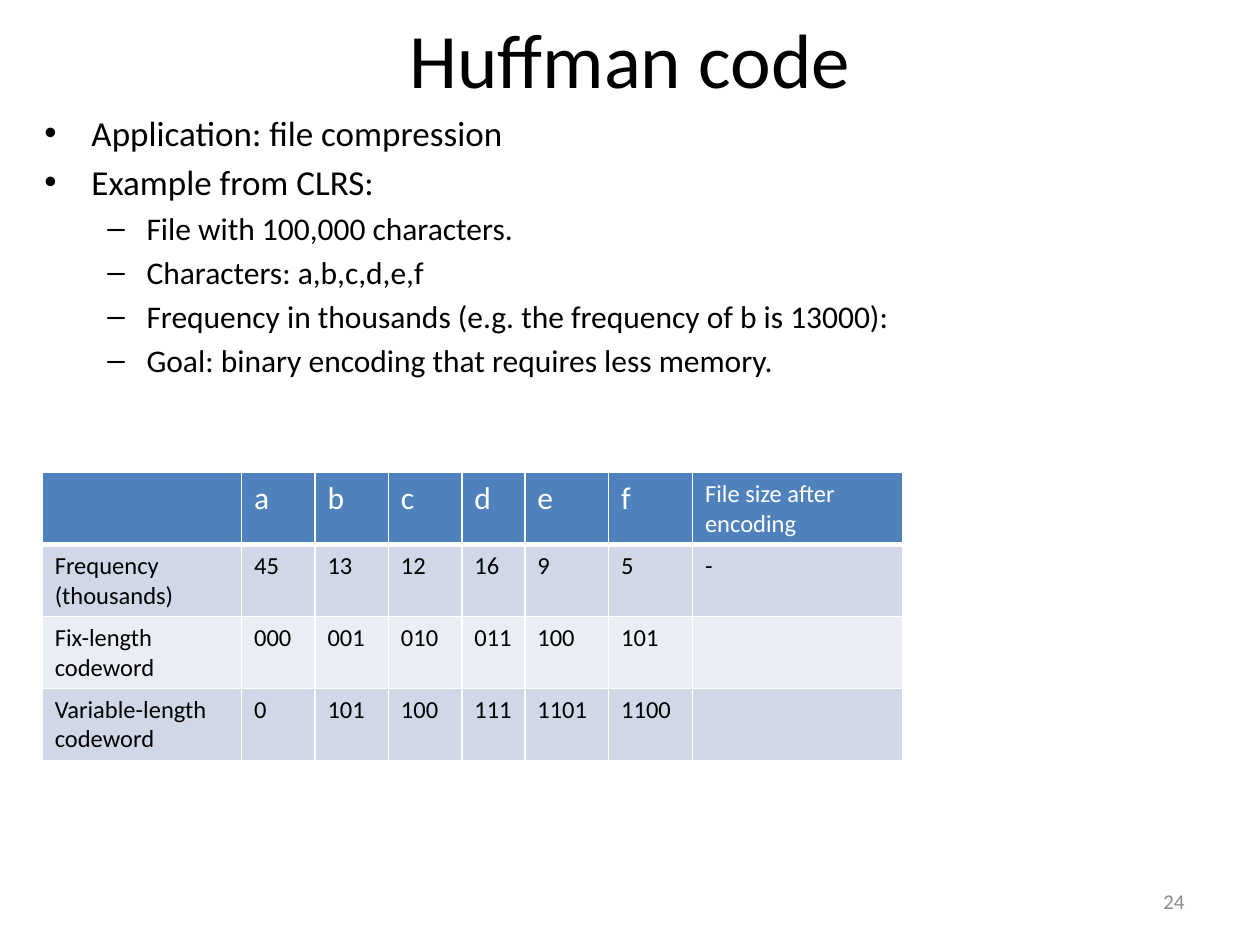
"""Build the Huffman code slide with its bullet list and codeword table."""
from lxml.etree import SubElement
from pptx import Presentation
from pptx.dml.color import RGBColor
from pptx.enum.text import MSO_ANCHOR, MSO_AUTO_SIZE, PP_ALIGN
from pptx.oxml.ns import qn
from pptx.util import Cm, Pt

COLORS = {
    "text": "000000",
    "header": "4F81BD",
    "dark_band": "D0D8E8",
    "light_band": "E9EDF4",
    "white": "FFFFFF",
    "number": "8C8C8C",
}


def format_font(font, size, color):
    for attribute, value in {"name": "Calibri", "size": Pt(size), "bold": False}.items():
        setattr(font, attribute, value)
    font.color.rgb = RGBColor.from_string(COLORS[color])


def add_border(cell, side, width):
    line = SubElement(cell._tc.get_or_add_tcPr(), qn(f"a:ln{side}"), w=str(Pt(width)))
    SubElement(SubElement(line, qn("a:solidFill")), qn("a:srgbClr"), val=COLORS["white"])


presentation = Presentation()
presentation.slide_width, presentation.slide_height = Cm(25.4), Cm(19.05)
slide = presentation.slides.add_slide(presentation.slide_layouts[1])

title, outline = slide.placeholders
number = slide.shapes.add_textbox(0, 0, 0, 0)
positions = [
    (title, (1.27, 0, 22.86, 2.33)),
    (outline, (0.64, 2.12, 22.86, 6.35)),
    (number, (18.2, 17.66, 5.93, 1.01)),
]
for part, lengths in positions:
    for attribute, length in zip(("left", "top", "width", "height"), lengths):
        setattr(part, attribute, Cm(length))

title.text_frame.text = "Huffman code"
format_font(title.text_frame.paragraphs[0].runs[0].font, 44, "text")

points = [
    (0, "Application: file compression"),
    (0, "Example from CLRS:"),
    (1, "File with 100,000 characters."),
    (1, "Characters: a,b,c,d,e,f"),
    (1, "Frequency in thousands (e.g. the frequency of b is 13000):"),
    (1, "Goal: binary encoding that requires less memory."),
]
level_formats = [
    {"size": 20, "margin": 0.95, "indent": -0.95},
    {"size": 18, "margin": 2.06, "indent": -0.79},
]
outline.text_frame.text = "\n".join(wording for level, wording in points)
outline.text_frame.auto_size = MSO_AUTO_SIZE.NONE
for paragraph, (level, wording) in zip(outline.text_frame.paragraphs, points):
    layout = level_formats[level]
    paragraph.level = level
    properties = paragraph._p.get_or_add_pPr()
    properties.set("marL", str(Cm(layout["margin"])))
    properties.set("indent", str(Cm(layout["indent"])))
    format_font(paragraph.runs[0].font, layout["size"], "text")

code_rows = [
    ["", "a", "b", "c", "d", "e", "f", "File size after encoding"],
    ["Frequency\n(thousands)", "45", "13", "12", "16", "9", "5", "-"],
    ["Fix-length codeword", "000", "001", "010", "011", "100", "101", ""],
    ["Variable-length codeword", "0", "101", "100", "111", "1101", "1100", ""],
]
column_widths = [4.02, 1.48, 1.48, 1.48, 1.27, 1.69, 1.69, 4.24]
row_fills = ["header", "dark_band", "light_band", "dark_band"]
row_height = 1.45
codes = slide.shapes.add_table(
    len(code_rows), len(column_widths), Cm(0.85), Cm(9.53),
    Cm(sum(column_widths)), Cm(row_height * len(code_rows)),
).table
for column, width in zip(codes.columns, column_widths):
    column.width = Cm(width)
for row_index, (row, wordings) in enumerate(zip(codes.rows, code_rows)):
    row.height = Cm(row_height)
    is_header = row_index == 0
    border_widths = {"L": 1, "R": 1, "T": 3 if row_index == 1 else 1, "B": 3 if is_header else 1}
    for cell, wording in zip(row.cells, wordings):
        cell.text = wording
        for side, width in border_widths.items():
            add_border(cell, side, width)
        cell.fill.solid()
        cell.fill.fore_color.rgb = RGBColor.from_string(COLORS[row_fills[row_index]])
        size = 18 if is_header and len(wording) == 1 else 14
        for paragraph in cell.text_frame.paragraphs:
            format_font(paragraph.font, size, "white" if is_header else "text")
            for run in paragraph.runs:
                format_font(run.font, size, "white" if is_header else "text")

number.text_frame.text = "24"
number.text_frame.word_wrap = True
number.text_frame.vertical_anchor = MSO_ANCHOR.MIDDLE
number.text_frame.paragraphs[0].alignment = PP_ALIGN.RIGHT
format_font(number.text_frame.paragraphs[0].runs[0].font, 12, "number")

presentation.save("out.pptx")
